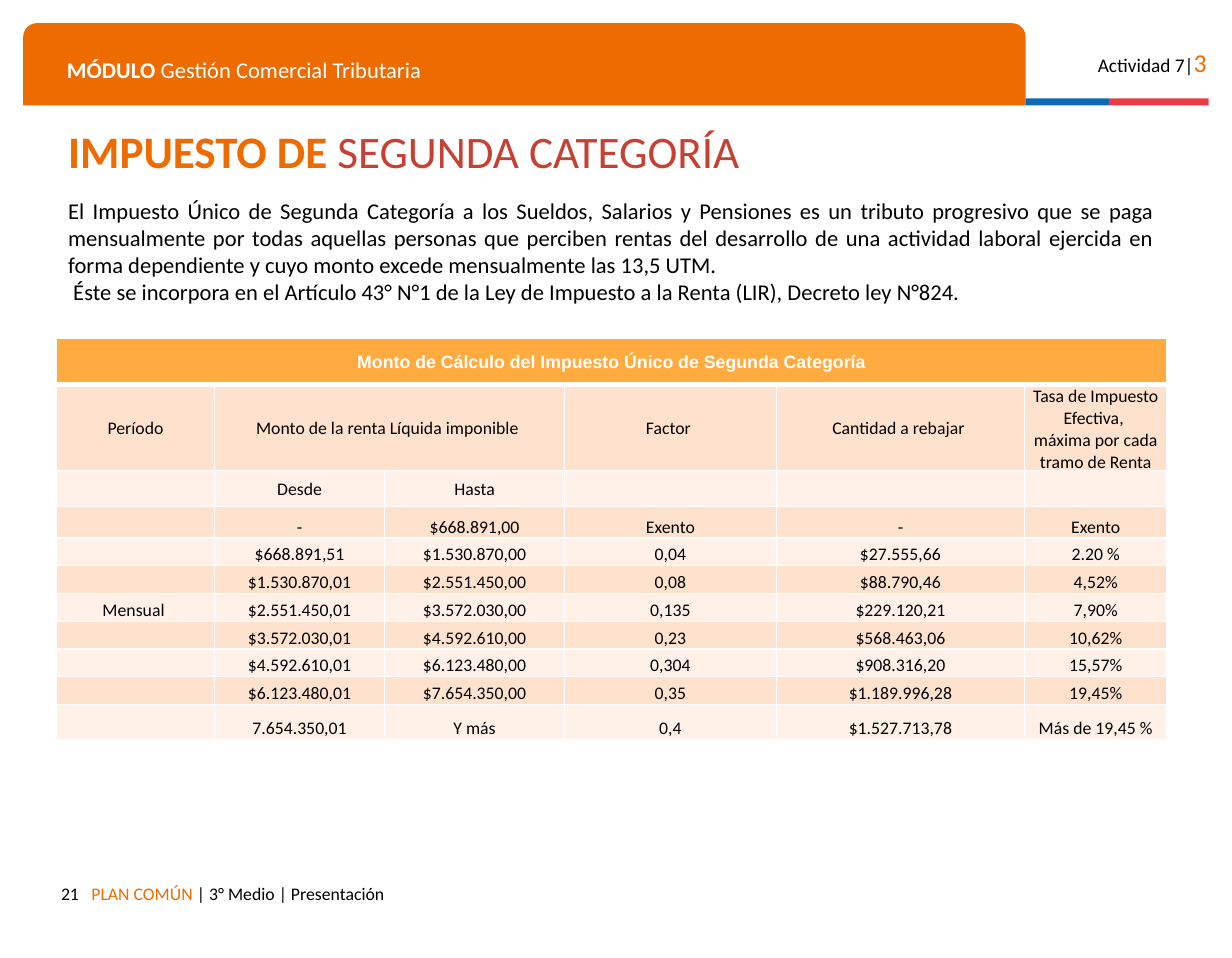
from lxml.etree import SubElement
from pptx import Presentation
from pptx.dml.color import RGBColor
from pptx.enum.shapes import MSO_SHAPE as Shape
from pptx.enum.text import MSO_ANCHOR as Anchor, PP_ALIGN as Align
from pptx.oxml.ns import qn
from pptx.util import Inches, Pt

ORANGE, BLUE, RED, BRICK = "ED6B00", "0F69B4", "EB3C46", "C64033"
BLACK, WHITE, AMBER = "000000", "FFFFFF", "FFAB40"
BANDS = ("FFE2CD", "FFF1E8")

BARS = [
    (Shape.ROUND_2_SAME_RECTANGLE, (0.2, 0.2, 8.65, 0.71), ORANGE),
    (Shape.RECTANGLE, (8.85, 0.85, 0.72, 0.06), BLUE),
    (Shape.RECTANGLE, (9.57, 0.85, 0.86, 0.06), RED),
]

# Each run: text, size, colour, bold
TEXTS = [
    {"box": (0.48, 0.38, 8.14, 0.35),
     "paragraphs": [[("MÓDULO", 14, WHITE, True),
                     (" Gestión Comercial Tributaria", 14, WHITE, False)]]},
    {"box": (9.23, 0.3, 1.28, 0.38), "format": {"alignment": Align.RIGHT},
     "paragraphs": [[("Actividad 7|", 12, BLACK, False), ("3", 16, ORANGE, False)]]},
    {"box": (0.2, 7.53, 0.58, 0.29), "format": {"alignment": Align.RIGHT},
     "paragraphs": [[("21", 11, BLACK, False)]]},
    {"box": (0.69, 7.53, 7.14, 0.38),
     "paragraphs": [[("PLAN COMÚN ", 11, ORANGE, False),
                     ("| 3° Medio | Presentación", 11, BLACK, False)]]},
    {"box": (0.49, 1.05, 7.62, 0.59), "anchor": Anchor.MIDDLE,
     "format": {"line_spacing": 0.8},
     "paragraphs": [[("IMPUESTO DE ", 28, ORANGE, True),
                     ("SEGUNDA CATEGORÍA", 28, BRICK, False)]]},
    {"box": (0.49, 1.65, 9.57, 1.04), "inset": 0.05,
     "format": {"alignment": Align.JUSTIFY},
     "paragraphs": [
         [("El Impuesto Único de Segunda Categoría a los Sueldos, Salarios y Pensiones "
           "es un tributo progresivo que se paga mensualmente por todas aquellas personas "
           "que perciben rentas del desarrollo de una actividad laboral ejercida en forma "
           "dependiente y cuyo monto excede mensualmente las 13,5 UTM.", 14, BLACK, False)],
         [(" Éste se incorpora en el Artículo 43° N°1 de la Ley de Impuesto a la Renta "
           "(LIR), Decreto ley N°824.", 14, BLACK, False)]]},
]

TABLE_LEFT, TABLE_TOP = 0.49, 2.92
COLUMN_WIDTHS = (1.36, 1.47, 1.55, 1.83, 2.14, 1.23)
ROW_HEIGHTS = (0.4, 0.73, 0.31, 0.27, *[0.24] * 6, 0.3)
MERGES = [((0, 0), (0, 5)), ((1, 1), (1, 2))]
HEADER_ROWS = 3
ROWS = [
    ("Monto de Cálculo del Impuesto Único de Segunda Categoría", "", "", "", "", ""),
    ("Período", "Monto de la renta Líquida imponible ", "", "Factor ", "Cantidad a rebajar ",
     "Tasa de Impuesto Efectiva, \nmáxima por cada tramo de Renta"),
    ("", "Desde", "Hasta", "", "", ""),
    ("", "-", "$668.891,00", "Exento", "-", "Exento"),
    ("", "$668.891,51", "$1.530.870,00", "0,04", "$27.555,66", "2.20 %"),
    ("", "$1.530.870,01", "$2.551.450,00", "0,08", "$88.790,46", "4,52%"),
    ("Mensual ", "$2.551.450,01", "$3.572.030,00", "0,135", "$229.120,21", "7,90%"),
    ("", "$3.572.030,01", "$4.592.610,00", "0,23", "$568.463,06", "10,62%"),
    ("", "$4.592.610,01", "$6.123.480,00", "0,304", "$908.316,20", "15,57%"),
    ("", "$6.123.480,01", "$7.654.350,00", "0,35", "$1.189.996,28", "19,45%"),
    ("", "7.654.350,01", "Y más", "0,4", "$1.527.713,78", "Más de 19,45 %"),
]


def set_all(target, values):
    for name, value in values.items():
        setattr(target, name, value)


def paint(fill, color):
    fill.solid()
    fill.fore_color.rgb = RGBColor.from_string(color)


def add_run(paragraph, text, size, color, bold, font="Calibri"):
    """Add text to the paragraph, with a line break at each newline."""
    for index, line in enumerate(text.split("\n")):
        if index:
            paragraph.add_line_break()
        run = paragraph.add_run()
        run.text = line
        set_all(run.font, {"name": font, "size": Pt(size), "bold": bold})
        run.font.color.rgb = RGBColor.from_string(color)


def add_bar(slide, kind, box, color):
    shape = slide.shapes.add_shape(kind, *map(Inches, box))
    shape.shadow.inherit = False
    paint(shape.fill, color)
    shape.line.fill.background()


def add_text(slide, box, paragraphs, format={}, anchor=Anchor.TOP, inset=0.1):
    frame = slide.shapes.add_textbox(*map(Inches, box)).text_frame
    set_all(frame, {"word_wrap": True, "vertical_anchor": anchor,
                    "margin_left": Inches(0.1), "margin_right": Inches(0.1),
                    "margin_top": Inches(inset), "margin_bottom": Inches(inset)})
    for index, runs in enumerate(paragraphs):
        paragraph = frame.add_paragraph() if index else frame.paragraphs[0]
        set_all(paragraph, format)
        for run in runs:
            add_run(paragraph, *run)


def add_border(cell, side, points):
    line = SubElement(cell._tc.get_or_add_tcPr(), qn(f"a:ln{side}"), w=str(Pt(points)))
    SubElement(SubElement(line, qn("a:solidFill")), qn("a:srgbClr"), val=WHITE)


def fill_cell(cell, row, text):
    title = row == 0
    set_all(cell, {"margin_left": Inches(0.01), "margin_right": Inches(0.01),
                   "margin_top": Inches(0.01), "margin_bottom": 0,
                   "vertical_anchor": Anchor.MIDDLE if row < HEADER_ROWS else Anchor.BOTTOM})
    for side in "LRTB":
        under_title = (row, side) in ((0, "B"), (1, "T"))
        add_border(cell, side, 3 if under_title else 1)
    paint(cell.fill, AMBER if title else BANDS[(row - 1) % 2])
    paragraph = cell.text_frame.paragraphs[0]
    paragraph.alignment = Align.CENTER
    if text:
        add_run(paragraph, text, 11, WHITE if title else BLACK, title,
                "Arial" if title else "Calibri")
    else:
        SubElement(paragraph._p, qn("a:endParaRPr"), sz="1100")


def add_tax_table(slide):
    table = slide.shapes.add_table(
        len(ROWS), len(COLUMN_WIDTHS), Inches(TABLE_LEFT), Inches(TABLE_TOP),
        Inches(sum(COLUMN_WIDTHS)), Inches(sum(ROW_HEIGHTS))).table
    for column, width in zip(table.columns, COLUMN_WIDTHS):
        column.width = Inches(width)
    for row, height in zip(table.rows, ROW_HEIGHTS):
        row.height = Inches(height)
    for row, texts in enumerate(ROWS):
        for column, text in enumerate(texts):
            fill_cell(table.cell(row, column), row, text)
    for first, last in MERGES:
        table.cell(*first).merge(table.cell(*last))


def main():
    presentation = Presentation()
    set_all(presentation, {"slide_width": Inches(10.63), "slide_height": Inches(8.27)})
    slide = presentation.slides.add_slide(presentation.slide_layouts[6])
    for bar in BARS:
        add_bar(slide, *bar)
    for text in TEXTS:
        add_text(slide, **text)
    add_tax_table(slide)
    presentation.save("out.pptx")


if __name__ == "__main__":
    main()
